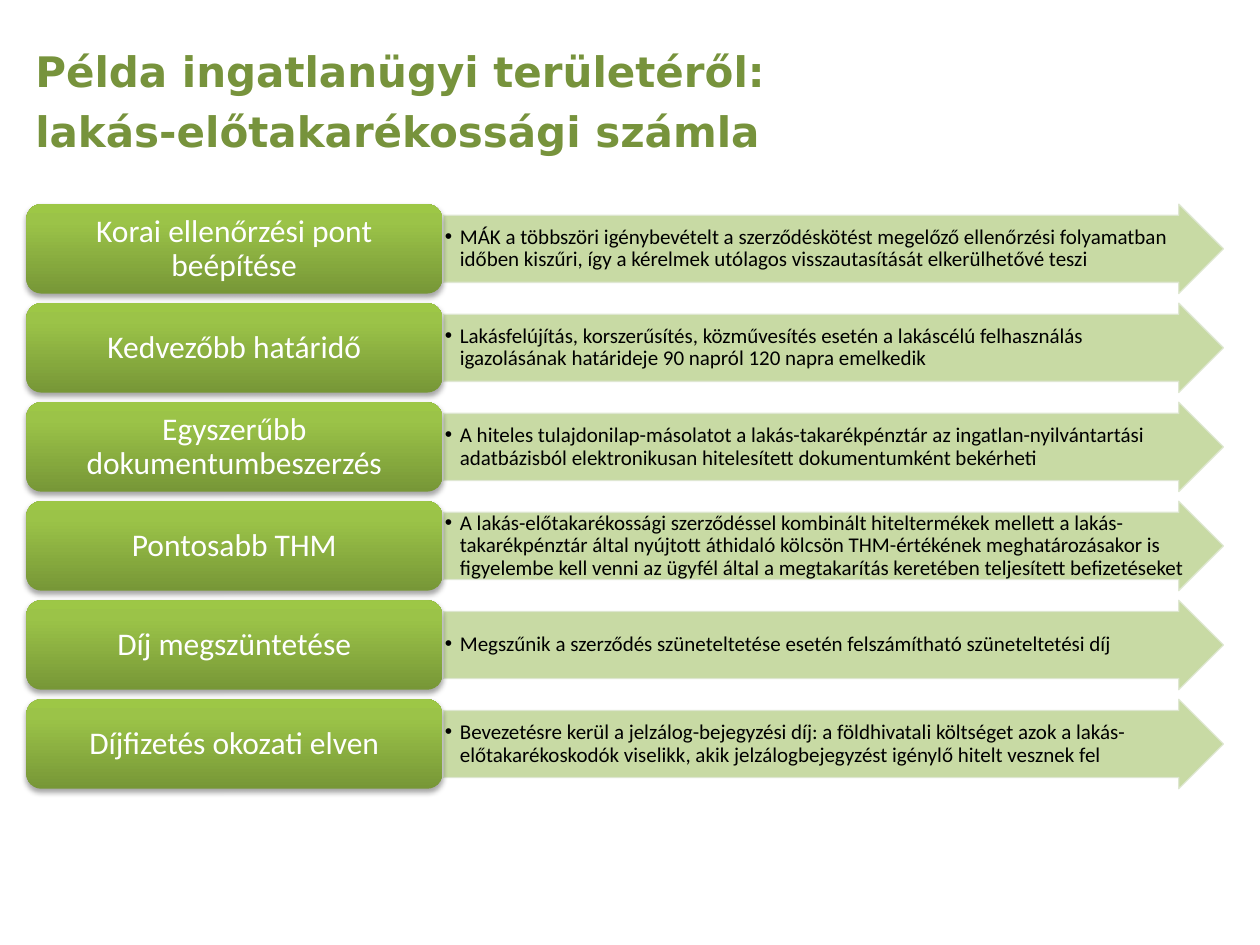
import copy
from dataclasses import dataclass

import pptx
import pptx.util
from lxml import etree
from pptx.dml.color import RGBColor
from pptx.enum.shapes import MSO_SHAPE
from pptx.enum.text import MSO_ANCHOR, MSO_AUTO_SIZE, PP_ALIGN
from pptx.oxml.ns import qn

HUES = {
    "title": "77933C", "arrow": "C3D69B", "edge": "DEE7D1",
    "deep": "779737", "mid": "9BC348", "light": "9DC746",
    "white": "FFFFFF", "black": "000000",
}
WIDE, HIGH = 10, 7.5

# Grid in inches: two columns, rows at an equal pitch
LEFT, SPLIT, RIGHT = 0.21, 3.52, 9.71
GAP = 0.01
TOP, PITCH, ROW = 1.62, 0.786, 0.71


@dataclass
class Step:
    name: str
    note: str


STEPS = [
    Step("Korai ellenőrzési pont beépítése",
         "MÁK a többszöri igénybevételt a szerződéskötést megelőző ellenőrzési "
         "folyamatban időben kiszűri, így a kérelmek utólagos visszautasítását "
         "elkerülhetővé teszi"),
    Step("Kedvezőbb határidő",
         "Lakásfelújítás, korszerűsítés, közművesítés esetén a lakáscélú "
         "felhasználás igazolásának határideje 90 napról 120 napra emelkedik"),
    Step("Egyszerűbb dokumentumbeszerzés",
         "A hiteles tulajdonilap-másolatot a lakás-takarékpénztár az "
         "ingatlan-nyilvántartási adatbázisból elektronikusan hitelesített "
         "dokumentumként bekérheti"),
    Step("Pontosabb THM",
         "A lakás-előtakarékossági szerződéssel kombinált hiteltermékek mellett "
         "a lakás-takarékpénztár által nyújtott áthidaló kölcsön THM-értékének "
         "meghatározásakor is figyelembe kell venni az ügyfél által a "
         "megtakarítás keretében teljesített befizetéseket"),
    Step("Díj megszüntetése",
         "Megszűnik a szerződés szüneteltetése esetén felszámítható "
         "szüneteltetési díj"),
    Step("Díjfizetés okozati elven",
         "Bevezetésre kerül a jelzálog-bejegyzési díj: a földhivatali költséget "
         "azok a lakás-előtakarékoskodók viselikk, akik jelzálogbejegyzést "
         "igénylő hitelt vesznek fel"),
]


def inch(size: float) -> int:
    return pptx.util.Inches(size)


def hue(name: str) -> RGBColor:
    return RGBColor.from_string(HUES[name])


def style(para, face: str, size: float, name: str, bold: bool = False) -> None:
    font = para.font
    font.name, font.size, font.bold = face, pptx.util.Pt(size), bold
    font.color.rgb = hue(name)


def node(owner, tag: str, **attrs: str):
    return etree.SubElement(owner, qn(tag), attrs)


def block(slide, kind, left: float, right: float, row: int, text: str,
          pad: float):
    """Add one shape of a row with its text; return shape and paragraph."""
    shape = slide.shapes.add_shape(
        kind, inch(left), inch(TOP + row * PITCH), inch(right - left), inch(ROW))
    shape.shadow.inherit = False
    frame = shape.text_frame
    frame.word_wrap = True
    frame.vertical_anchor = MSO_ANCHOR.MIDDLE
    frame.margin_left = frame.margin_right = inch(pad)
    frame.margin_top = frame.margin_bottom = inch(0.01)
    para = frame.paragraphs[0]
    para.text = text
    para.line_spacing = 0.9
    return shape, para


def arrow(slide, row: int, text: str) -> None:
    shape, para = block(slide, MSO_SHAPE.RIGHT_ARROW, SPLIT, RIGHT, row, text, 0.01)
    shape.adjustments[0], shape.adjustments[1] = 0.75, 0.5
    shape.fill.solid()
    shape.fill.fore_color.rgb = hue("arrow")
    shape.line.color.rgb = hue("edge")
    shape.line.width = pptx.util.Pt(0.75)
    for tint in shape.element.spPr.iter(qn("a:srgbClr")):
        node(tint, "a:alpha", val="90000")
    # Bullet with a hanging indent
    para.alignment = PP_ALIGN.LEFT
    props = para._p.get_or_add_pPr()
    props.set("marL", str(inch(0.12)))
    props.set("indent", str(inch(-0.12)))
    node(props, "a:buFont", typeface="Arial")
    node(props, "a:buChar", char="•")
    style(para, "Calibri", 12, "black")


def label(slide, row: int, text: str) -> None:
    shape, para = block(slide, MSO_SHAPE.ROUNDED_RECTANGLE, LEFT, SPLIT - GAP,
                        row, text, 0.07)
    shape.line.fill.background()
    # Three-stop gradient, dark at the bottom
    fill = shape.fill
    fill.gradient()
    fill.gradient_angle = 90
    stops = shape.element.spPr.find(".//" + qn("a:gsLst"))
    stops.append(copy.deepcopy(stops[-1]))
    shades = [(0, "deep"), (0.8, "mid"), (1, "light")]
    for stop, (place, name) in zip(fill.gradient_stops, shades):
        stop.position = place
        stop.color.rgb = hue(name)
    # Soft shadow below
    glow = node(shape.element.spPr.find(qn("a:effectLst")), "a:outerShdw",
                blurRad=str(pptx.util.Pt(3.1)), dist=str(pptx.util.Pt(1.8)),
                dir="5400000", rotWithShape="0")
    node(node(glow, "a:srgbClr", val=HUES["black"]), "a:alpha", val="35000")
    para.alignment = PP_ALIGN.CENTER
    style(para, "Calibri", 18, "white")


def head(slide) -> None:
    title = slide.shapes.title
    title.left, title.top = inch(-0.02 * WIDE), inch(0.29)
    title.width, title.height = inch(7.32), inch(1.18)
    frame = title.text_frame
    frame.text = "Példa ingatlanügyi területéről:\nlakás-előtakarékossági számla"
    frame.word_wrap = True
    frame.auto_size = MSO_AUTO_SIZE.NONE
    frame.vertical_anchor = MSO_ANCHOR.TOP
    frame.margin_top = inch(0.07)
    for para in frame.paragraphs:
        para.alignment = PP_ALIGN.LEFT
        para._p.get_or_add_pPr().set("marL", str(inch(0.38)))
        style(para, "DejaVu Sans", 24, "title", True)
    frame.paragraphs[1].space_before = pptx.util.Pt(5.8)


def main() -> None:
    deck = pptx.Presentation()
    deck.slide_width, deck.slide_height = inch(WIDE), inch(HIGH)
    slide = deck.slides.add_slide(deck.slide_layouts.get_by_name("Title Only"))
    head(slide)
    for row, step in enumerate(STEPS):
        arrow(slide, row, step.note)
        label(slide, row, step.name)
    deck.save("out.pptx")


if __name__ == "__main__":
    main()
